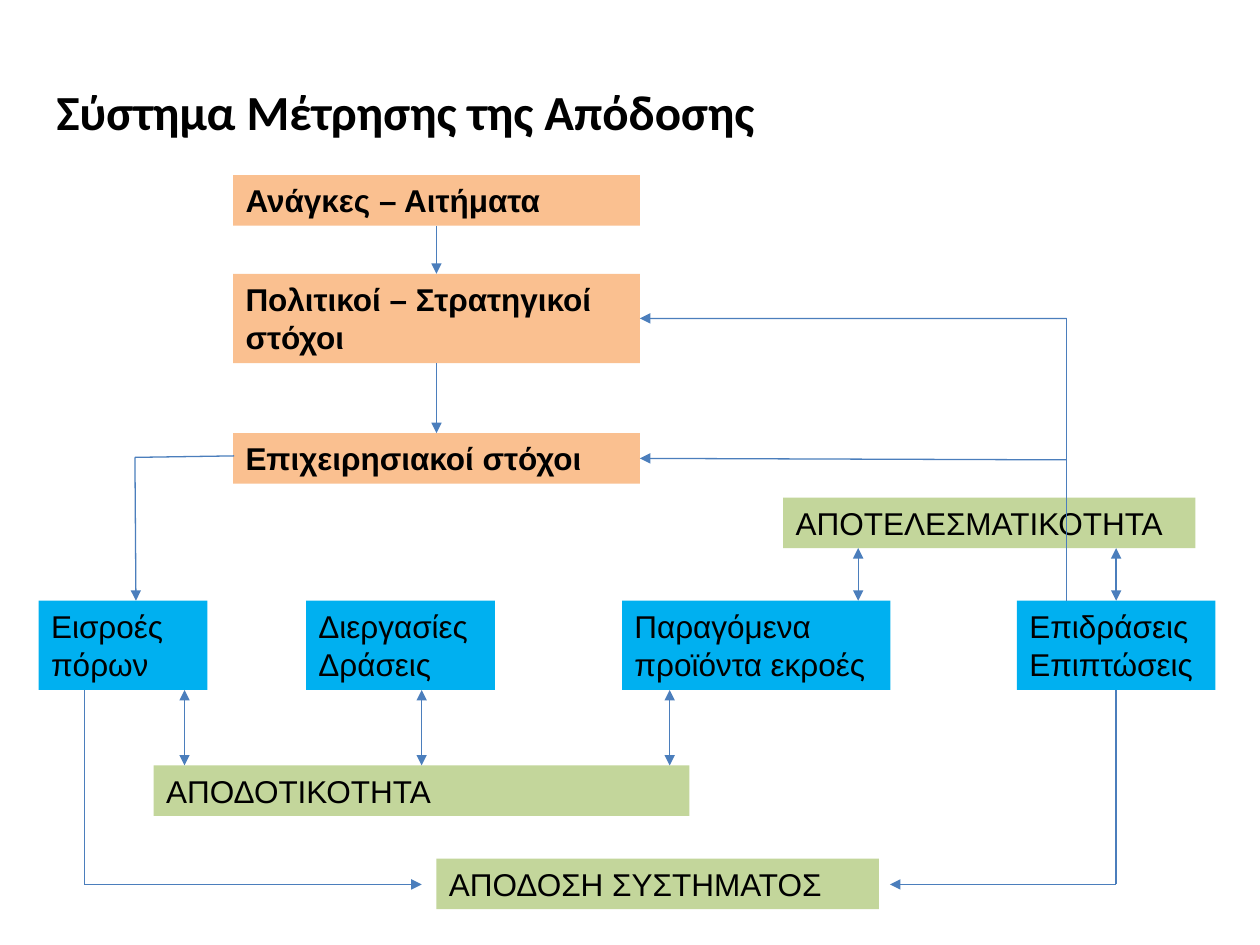
from dataclasses import dataclass
from typing import Optional

from lxml import etree
from pptx import Presentation
from pptx import util as u
from pptx.dml.color import RGBColor
from pptx.enum import shapes, text
from pptx.oxml import ns

BLACK = RGBColor(0x00, 0x00, 0x00)
ORANGE = RGBColor(0xFA, 0xC0, 0x90)
BLUE = RGBColor(0x00, 0xB0, 0xF0)
GREEN = RGBColor(0xC3, 0xD6, 0x9B)
LINE_BLUE = RGBColor(0x4B, 0x7E, 0xBC)

ONE_LINE, TWO_LINES = 1.02, 1.8
TOP, BOTTOM, RIGHT = 0, 2, 3

# All positions below are in centimetres.
GOAL_LEFT, GOAL_WIDTH = 4.7, 8.2
GOAL_RIGHT = GOAL_LEFT + GOAL_WIDTH
GOAL_AXIS = GOAL_LEFT + GOAL_WIDTH / 2
NEEDS_TOP, STRATEGY_TOP, OPERATIONS_TOP = 3.53, 5.52, 8.73
STRATEGY_AXIS = STRATEGY_TOP + TWO_LINES / 2
OPERATIONS_AXIS = OPERATIONS_TOP + ONE_LINE / 2
STAGE_TOP = 12.11
STAGE_BOTTOM = STAGE_TOP + TWO_LINES
EFFECT_TOP = 10.03
EFFECT_BOTTOM = EFFECT_TOP + ONE_LINE
EFFICIENCY_TOP = 15.43
SYSTEM_AXIS = 17.83
INPUT_X, FEEDBACK_X, IMPACT_X = 1.7, 21.5, 22.5


@dataclass
class Box:
    key: str
    words: str
    left: float
    top: float
    width: float
    height: float
    fill: RGBColor
    bold: bool = False


@dataclass
class Joint:
    """A side of a box: 0 top, 1 left, 2 bottom, 3 right."""
    box: str
    side: int


@dataclass
class Line:
    start: tuple
    end: tuple
    head: bool = False
    tail: bool = False
    start_joint: Optional[Joint] = None
    end_joint: Optional[Joint] = None


def goal(key: str, words: str, top: float, height: float = ONE_LINE) -> Box:
    return Box(key, words, GOAL_LEFT, top, GOAL_WIDTH, height, ORANGE, True)


def stage(key: str, words: str, left: float, width: float) -> Box:
    return Box(key, words, left, STAGE_TOP, width, TWO_LINES, BLUE)


def measure(key: str, words: str, left: float, top: float, width: float) -> Box:
    return Box(key, words, left, top, width, ONE_LINE, GREEN)


BOXES = [
    goal("needs", "Ανάγκες – Αιτήματα", NEEDS_TOP),
    goal("strategy", "Πολιτικοί – Στρατηγικοί στόχοι", STRATEGY_TOP, TWO_LINES),
    goal("operations", "Επιχειρησιακοί στόχοι", OPERATIONS_TOP),
    stage("inputs", "Εισροές πόρων", 0.78, 3.4),
    stage("processes", "Διεργασίες\nΔράσεις", 6.17, 3.81),
    stage("outputs", "Παραγόμενα προϊόντα εκροές", 12.54, 5.41),
    stage("impacts", "Επιδράσεις\nΕπιπτώσεις", 20.5, 4),
    measure("effectiveness", "ΑΠΟΤΕΛΕΣΜΑΤΙΚΟΤΗΤΑ", 15.79, EFFECT_TOP, 8.31),
    measure("efficiency", "ΑΠΟΔΟΤΙΚΟΤΗΤΑ", 3.1, EFFICIENCY_TOP, 10.8),
    measure("system", "ΑΠΟΔΟΣΗ ΣΥΣΤΗΜΑΤΟΣ", 8.8, 17.31, 8.92),
]


def double_arrow(x: float, low: float, high: float,
                 joint: Optional[Joint] = None) -> Line:
    return Line((x, low), (x, high), True, True, joint)


LINES = [
    Line((GOAL_AXIS, NEEDS_TOP + ONE_LINE), (GOAL_AXIS, STRATEGY_TOP), tail=True,
         start_joint=Joint("needs", BOTTOM), end_joint=Joint("strategy", TOP)),
    Line((GOAL_AXIS, STRATEGY_TOP + TWO_LINES), (GOAL_AXIS, OPERATIONS_TOP), tail=True,
         start_joint=Joint("strategy", BOTTOM), end_joint=Joint("operations", TOP)),
    double_arrow(17.3, STAGE_TOP, EFFECT_BOTTOM),
    double_arrow(IMPACT_X, STAGE_TOP, EFFECT_BOTTOM, Joint("impacts", TOP)),
    double_arrow(3.72, EFFICIENCY_TOP, STAGE_BOTTOM),
    double_arrow(8.5, EFFICIENCY_TOP, STAGE_BOTTOM, Joint("efficiency", TOP)),
    double_arrow(13.5, EFFICIENCY_TOP, STAGE_BOTTOM),
    Line((INPUT_X, STAGE_BOTTOM), (INPUT_X, SYSTEM_AXIS)),
    Line((INPUT_X, SYSTEM_AXIS), (8.5, SYSTEM_AXIS), tail=True),
    Line((IMPACT_X, STAGE_BOTTOM), (IMPACT_X, SYSTEM_AXIS),
         start_joint=Joint("impacts", BOTTOM)),
    Line((IMPACT_X, SYSTEM_AXIS), (17.94, SYSTEM_AXIS), tail=True),
    Line((FEEDBACK_X, STAGE_TOP), (FEEDBACK_X, STRATEGY_AXIS)),
    Line((FEEDBACK_X, STRATEGY_AXIS), (GOAL_RIGHT, STRATEGY_AXIS), tail=True,
         end_joint=Joint("strategy", RIGHT)),
    Line((FEEDBACK_X, 9.27), (GOAL_RIGHT, OPERATIONS_AXIS), tail=True,
         end_joint=Joint("operations", RIGHT)),
    Line((4.72, 9.19), (2.72, 9.22)),
    Line((2.72, 9.22), (2.74, STAGE_TOP), tail=True),
]


def write_text(shape, words: str, size: float, font: str, bold: bool) -> None:
    frame = shape.text_frame
    frame.word_wrap = True
    frame.auto_size = text.MSO_AUTO_SIZE.SHAPE_TO_FIT_TEXT
    frame.vertical_anchor = text.MSO_ANCHOR.TOP
    for index, content in enumerate(words.split("\n")):
        paragraph = frame.add_paragraph() if index else frame.paragraphs[0]
        paragraph.alignment = text.PP_ALIGN.LEFT
        run = paragraph.add_run()
        run.text = content
        run.font.size = u.Pt(size)
        run.font.name = font
        run.font.bold = bold
        run.font.color.rgb = BLACK


def draw_box(slide, box: Box):
    shape = slide.shapes.add_shape(
        shapes.MSO_SHAPE.RECTANGLE,
        u.Cm(box.left), u.Cm(box.top), u.Cm(box.width), u.Cm(box.height))
    shape.shadow.inherit = False
    shape.fill.solid()
    shape.fill.fore_color.rgb = box.fill
    shape.line.fill.background()
    write_text(shape, box.words, 18, "Arial", box.bold)
    return shape


def draw_line(slide, line: Line, drawn: dict) -> None:
    connector = slide.shapes.add_connector(
        shapes.MSO_CONNECTOR.STRAIGHT,
        *(u.Cm(value) for value in line.start + line.end))
    if line.start_joint:
        connector.begin_connect(drawn[line.start_joint.box], line.start_joint.side)
    if line.end_joint:
        connector.end_connect(drawn[line.end_joint.box], line.end_joint.side)
    connector.line.color.rgb = LINE_BLUE
    connector.line.width = u.Pt(0.75)
    properties = connector._element.spPr.find(ns.qn("a:ln"))
    for tag, wanted in (("a:headEnd", line.head), ("a:tailEnd", line.tail)):
        if wanted:
            etree.SubElement(properties, ns.qn(tag), type="triangle")
    etree.SubElement(connector._element.spPr, ns.qn("a:effectLst"))


def main() -> None:
    presentation = Presentation()
    presentation.slide_width, presentation.slide_height = u.Cm(25.4), u.Cm(19.05)
    slide = presentation.slides.add_slide(presentation.slide_layouts[6])
    title = slide.shapes.add_textbox(u.Cm(0.89), u.Cm(1.52), u.Cm(15.8), u.Cm(1.45))
    write_text(title, "Σύστημα Μέτρησης της Απόδοσης", 28, "Calibri", True)
    drawn = {box.key: draw_box(slide, box) for box in BOXES}
    for line in LINES:
        draw_line(slide, line, drawn)
    presentation.save("out.pptx")


if __name__ == "__main__":
    main()
